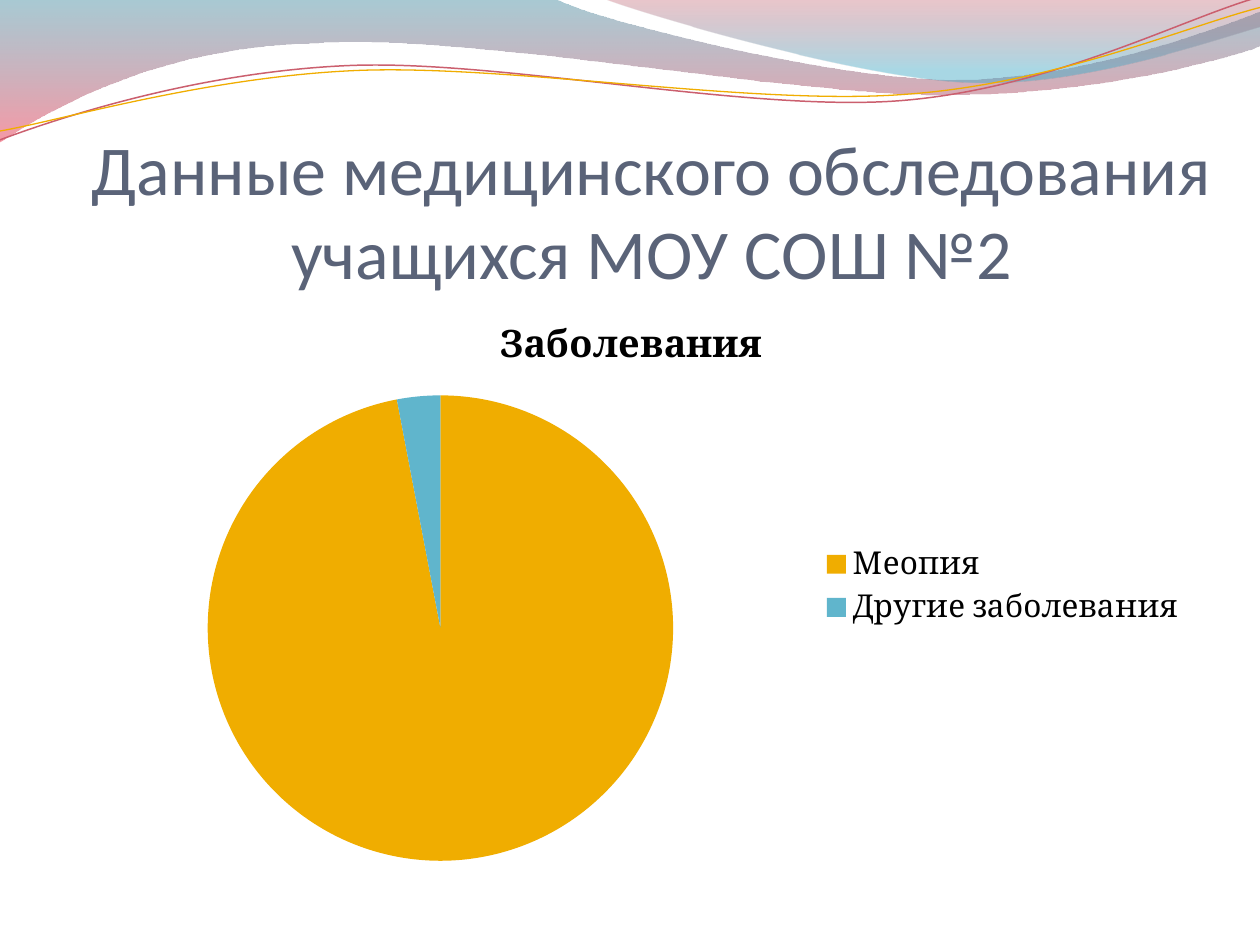
import math

import lxml.etree
import pptx
import pptx.chart.data
import pptx.dml.color
import pptx.enum.chart
import pptx.enum.text
import pptx.oxml
import pptx.oxml.ns
import pptx.util
from pptx.util import Inches


def rgb(value):
    return pptx.dml.color.RGBColor.from_string(value)


def draw_outline(shapes, start, segments, closed):
    """Draw segments of one end point (line) or three points (cubic curve)."""
    builder = shapes.build_freeform(Inches(start[0]), Inches(start[1]))
    points = [(Inches(x), Inches(y)) for segment in segments for x, y in segment]
    builder.add_line_segments(points, close=closed)
    shape = builder.convert_to_shape()
    shape.shadow.inherit = False
    # Join every three line points of a curve into one Bézier segment.
    lines = iter(list(shape._element.spPr.iter(pptx.oxml.ns.qn("a:lnTo"))))
    for segment in segments:
        first = next(lines)
        if len(segment) == 3:
            curve = lxml.etree.Element(pptx.oxml.ns.qn("a:cubicBezTo"))
            first.addprevious(curve)
            for line in (first, next(lines), next(lines)):
                curve.append(line[0])
                line.getparent().remove(line)
    return shape


presentation = pptx.Presentation()
presentation.slide_width = Inches(10)
presentation.slide_height = Inches(7.5)
slide = presentation.slides.add_slide(presentation.slide_layouts[5])
shapes = slide.shapes

# Translucent waves: start, segments, gradient stops (position, colour, opacity %)
waves = [
    ((0, 0),
     [[(4.4, -0.01)],
      [(4.76, 0.17), (6.64, 0.63), (7.58, 0.63)],
      [(8.53, 0.63), (9.58, 0.26), (10, 0.09)],
      [(10.01, 0.36)],
      [(9.83, 0.44), (8.7, 0.76), (7.46, 0.75)],
      [(6.22, 0.75), (3.82, 0.28), (2.57, 0.34)],
      [(1.29, 0.36), (0.46, 0.83), (-0.01, 1.13)],
      [(0, 0)]],
     [(0, "3F8A9F", 45), (1, "EF445B", 55)]),
    ((4.79, -0.01),
     [[(5.09, 0.11), (6.82, 0.62), (7.69, 0.65)],
      [(8.56, 0.69), (9.61, 0.32), (10, 0.21)],
      [(10, 0)],
      [(4.79, -0.01)]],
     [(0, "B84253", 30), (0.8, "42ABC7", 45)]),
]
for start, segments, stops in waves:
    wave = draw_outline(shapes, start, segments, closed=True)
    wave.line.fill.background()
    wave.fill.gradient()
    wave.fill.gradient_angle = 270
    for gradient_stop, (position, color, opacity) in zip(wave.fill.gradient_stops, stops):
        gradient_stop.position = position
        gradient_stop.color.rgb = rgb(color)
    color_elements = wave._element.spPr.iter(pptx.oxml.ns.qn("a:srgbClr"))
    for element, (position, color, opacity) in zip(color_elements, stops):
        element.append(pptx.oxml.parse_xml(
            f'<a:alpha {pptx.oxml.ns.nsdecls("a")} val="{opacity * 1000}"/>'))

# Thin tilted ribbons: centre, start, segments, colour, width
TILT = -2.7
ribbons = [
    ((4.99, 0.58), (0, 1.11),
     [[(0.48, 0.93), (1.58, 0.57), (2.77, 0.52)],
      [(3.95, 0.47), (5.93, 0.89), (7.13, 0.8)],
      [(8.33, 0.71), (9.38, 0.15), (9.98, -0.02)]],
     "CB5F6E", 0.85),
    ((5, 0.59), (0, 1.04),
     [[(0.47, 0.96), (1.64, 0.61), (2.83, 0.56)],
      [(4.03, 0.51), (5.97, 0.84), (7.17, 0.75)],
      [(8.36, 0.67), (9.41, 0.21), (10, 0.06)]],
     "F0AD00", 0.75),
]
cosine, sine = math.cos(math.radians(TILT)), math.sin(math.radians(TILT))
for (center_x, center_y), start, segments, color, width in ribbons:
    # Level the points about the centre; the shape's rotation tilts them back.
    level_start, *level_segments = [
        [(center_x + (x - center_x) * cosine + (y - center_y) * sine,
          center_y - (x - center_x) * sine + (y - center_y) * cosine)
         for x, y in segment]
        for segment in ([start], *segments)]
    ribbon = draw_outline(shapes, level_start[0], level_segments, closed=False)
    ribbon.rotation = TILT
    ribbon.fill.background()
    ribbon.line.color.rgb = rgb(color)
    ribbon.line.width = pptx.util.Pt(width)

title = shapes.title
shapes._spTree.append(title._element)  # in front of the waves
title.left, title.top = Inches(0.67), Inches(0.76)
title.width, title.height = Inches(9), Inches(1.57)
frame = title.text_frame
frame.text = "Данные медицинского обследования учащихся МОУ СОШ №2"
frame.word_wrap = True
frame.auto_size = pptx.enum.text.MSO_AUTO_SIZE.NONE
frame.vertical_anchor = pptx.enum.text.MSO_ANCHOR.BOTTOM
frame.margin_left = frame.margin_right = frame.margin_bottom = 0
frame.margin_top = Inches(0.05)
paragraph = frame.paragraphs[0]
paragraph.alignment = pptx.enum.text.PP_ALIGN.CENTER
paragraph.font.name = "Calibri"
paragraph.font.size = pptx.util.Pt(40)
paragraph.font.color.rgb = rgb("5A6378")

chart_data = pptx.chart.data.CategoryChartData()
chart_data.categories = ["Меопия", "Другие заболевания"]
chart_data.add_series("Заболевания", (97, 3))
chart = shapes.add_chart(pptx.enum.chart.XL_CHART_TYPE.PIE, Inches(0.51), Inches(2.33),
                         Inches(9), Inches(4.64), chart_data).chart
chart.font.name = "Cambria"
chart.font.size = pptx.util.Pt(18)
chart.font.color.rgb = rgb("000000")

chart.has_title = True
chart.chart_title.include_in_layout = False
chart.chart_title.text_frame.text = "Заболевания"
title_font = chart.chart_title.text_frame.paragraphs[0].font
title_font.name = "Cambria"
title_font.size = pptx.util.Pt(21.6)
title_font.bold = True
title_font.color.rgb = rgb("000000")

chart.has_legend = True
chart.legend.position = pptx.enum.chart.XL_LEGEND_POSITION.RIGHT
chart.legend.include_in_layout = False

pie = chart.plots[0]
pie.vary_by_categories = True
for index, color in enumerate(("F0AD00", "60B5CC")):
    slice_fill = pie.series[0].points[index].format.fill
    slice_fill.solid()
    slice_fill.fore_color.rgb = rgb(color)

presentation.save("out.pptx")
